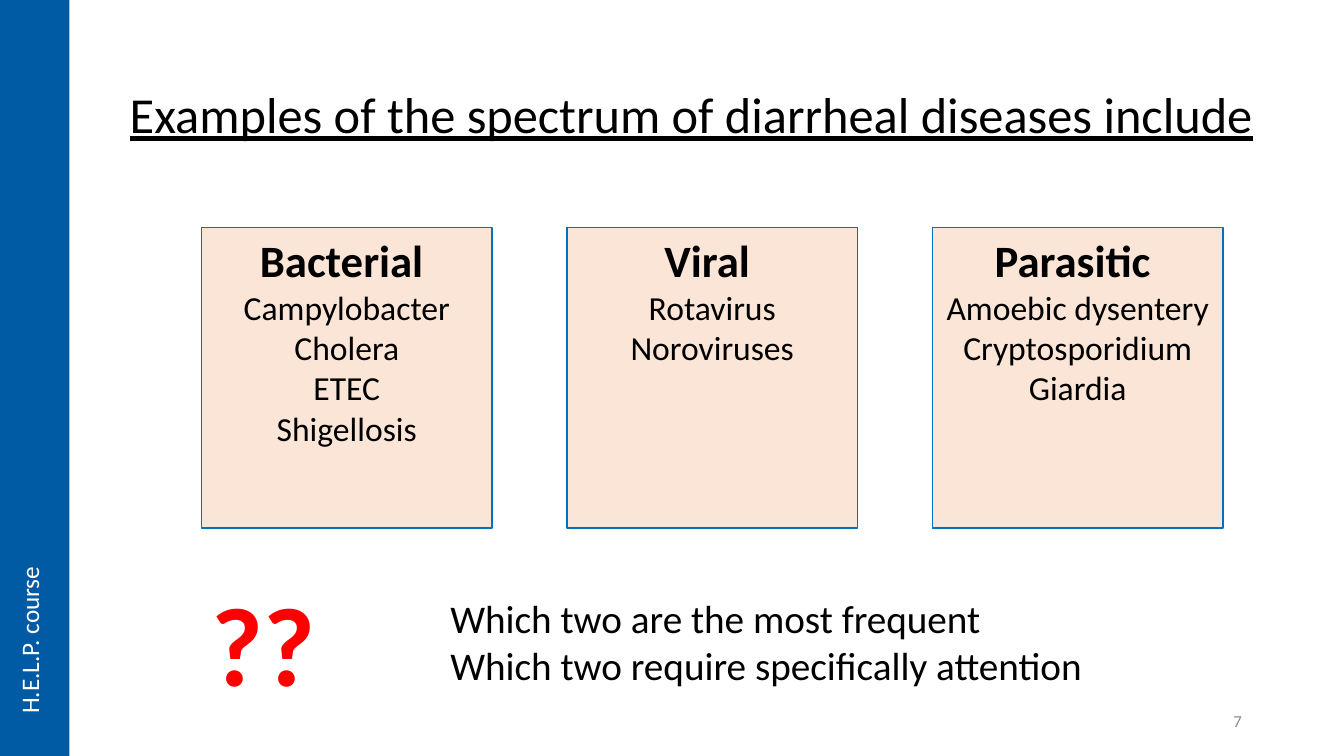
from pptx import Presentation
from pptx import util as u
from pptx.dml.color import RGBColor
from pptx.enum import shapes, text

GROUPS = [
    ("Bacterial ", ["Campylobacter", "Cholera", "ETEC", "Shigellosis"]),
    ("Viral ", ["Rotavirus", "Noroviruses"]),
    ("Parasitic ", ["Amoebic dysentery", "Cryptosporidium", "Giardia"]),
]


def colour(value):
    """Turn a hex string into a colour."""
    return RGBColor.from_string(value)


def write(tf, lines, align=text.PP_ALIGN.LEFT):
    """Write one paragraph per (wording, font format) pair."""
    for i, (wording, fmt) in enumerate(lines):
        p = tf.paragraphs[0] if i == 0 else tf.add_paragraph()
        p.alignment = align
        r = p.add_run()
        r.text = wording
        values = {"name": "Calibri", "color": "000000", **fmt}
        r.font.color.rgb = colour(values.pop("color"))
        for name, value in values.items():
            setattr(r.font, name, value)


def add_box(s, place, fill, line=None):
    """Add a filled rectangle, outlined if a line colour is given."""
    sp = s.shapes.add_shape(shapes.MSO_SHAPE.RECTANGLE, *map(u.Cm, place))
    sp.shadow.inherit = False
    sp.fill.solid()
    sp.fill.fore_color.rgb = colour(fill)
    if line:
        sp.line.color.rgb = colour(line)
        sp.line.width = u.Pt(1)
    else:
        sp.line.fill.background()
    return sp


def add_text(s, place, lines, align=text.PP_ALIGN.LEFT, **frame):
    """Add a text box with the given frame settings."""
    sp = s.shapes.add_textbox(*map(u.Cm, place))
    for name, value in {"word_wrap": False, **frame}.items():
        setattr(sp.text_frame, name, value)
    write(sp.text_frame, lines, align)
    return sp


def add_group(s, left, heading, diseases):
    """Add a card with a bold heading above its diseases."""
    sp = add_box(s, (left, 5.74, 7.32, 7.57), "FBE5D6", "0070C0")
    sp.text_frame.vertical_anchor = text.MSO_ANCHOR.TOP
    lines = [(heading, {"size": u.Pt(32), "bold": True})]
    lines += [(d, {"size": u.Pt(24)}) for d in diseases]
    write(sp.text_frame, lines, text.PP_ALIGN.CENTER)


def main():
    """Build the slide and save it."""
    prs = Presentation()
    prs.slide_width, prs.slide_height = u.Cm(33.87), u.Cm(19.05)
    s = prs.slides.add_slide(prs.slide_layouts[6])

    add_box(s, (0, 0, 1.75, 19.05), "005BA4")
    course = add_text(s, (0.23, 14.1, 1.27, 4.14),
                      [("H.E.L.P. course", {"size": u.Pt(18), "color": "FFFFFF"})])
    course.element.txBody.bodyPr.set("vert", "vert270")
    add_text(s, (23.93, 17.65, 7.62, 1.02),
             [("7", {"size": u.Pt(12), "color": "8C8C8C"})], text.PP_ALIGN.RIGHT,
             word_wrap=True, vertical_anchor=text.MSO_ANCHOR.MIDDLE)

    for i, (heading, diseases) in enumerate(GROUPS):
        add_group(s, 5.08 + 9.21 * i, heading, diseases)

    add_text(s, (3.02, 1.96, 29.08, 1.8),
             [("Examples of the spectrum of diarrheal diseases include",
               {"size": u.Pt(36), "underline": True})])
    add_text(s, (5.08, 14.35, 3.15, 3.68),
             [("??", {"size": u.Pt(80), "bold": True, "color": "FF0000"})])
    questions = ["Which two are the most frequent",
                 "Which two require specifically attention"]
    add_text(s, (11.1, 14.86, 16.64, 2.64),
             [(q, {"size": u.Pt(28)}) for q in questions])

    prs.save("out.pptx")


if __name__ == "__main__":
    main()
